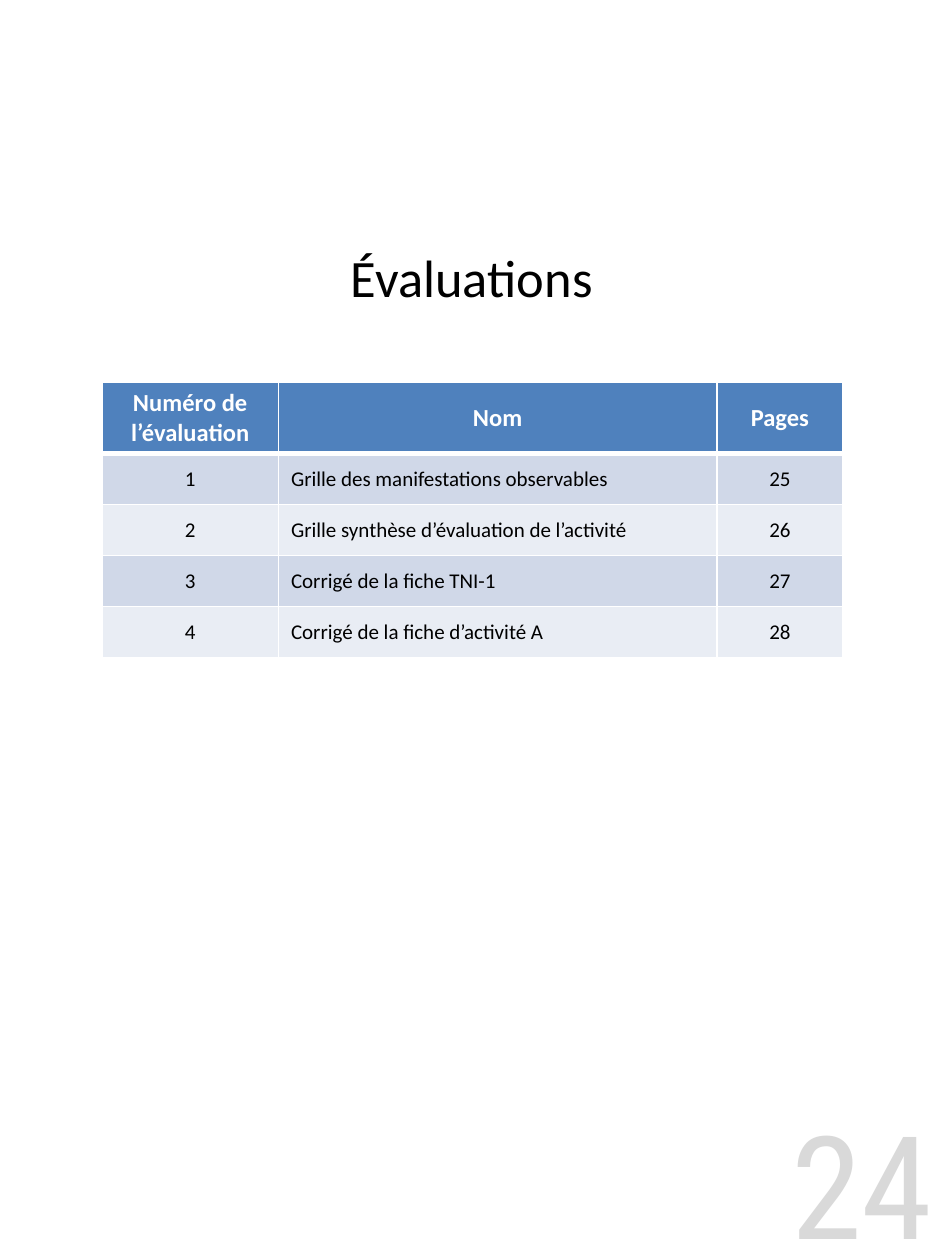
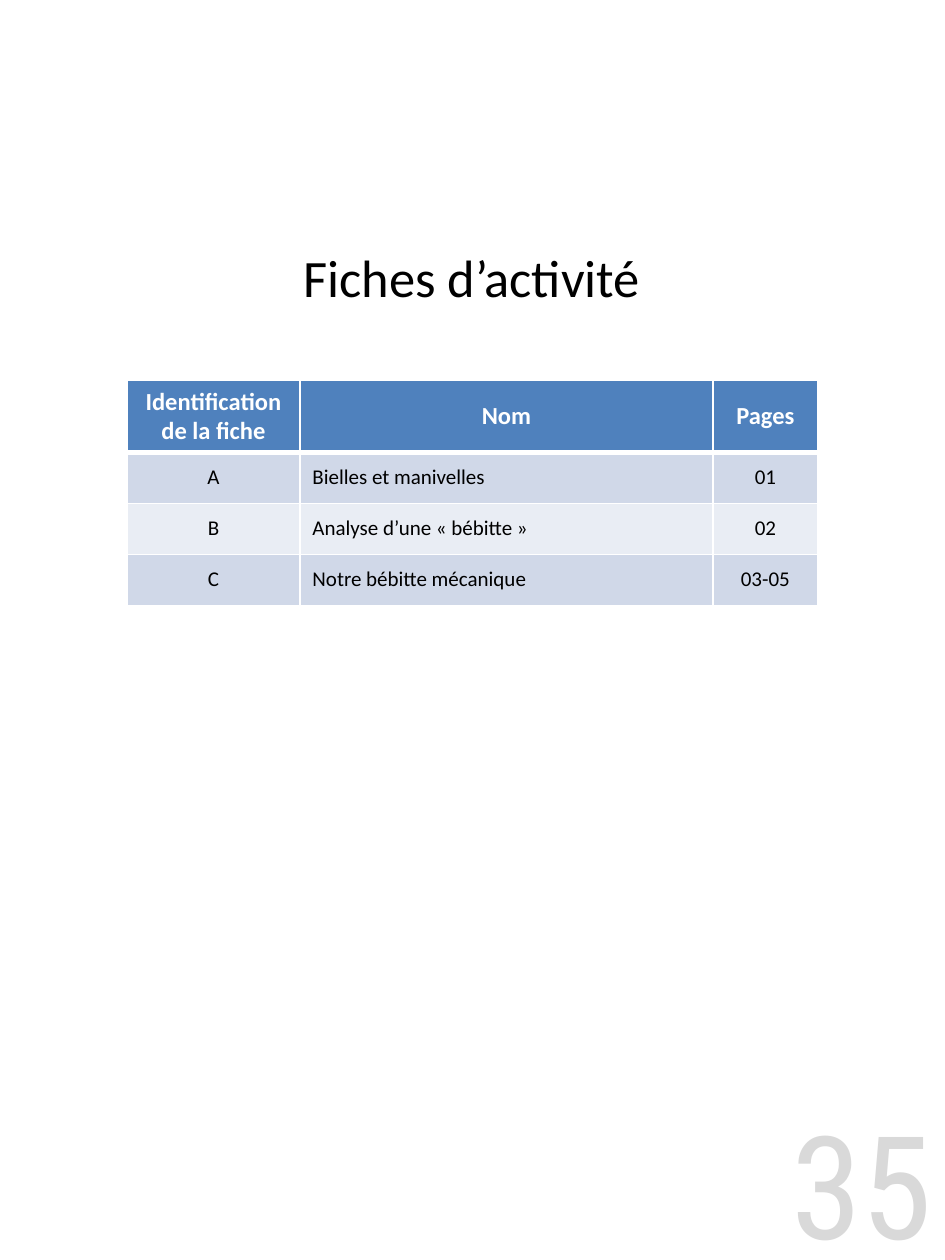
import dataclasses
import typing

import lxml.etree
import pptx
import pptx.dml.color
import pptx.enum.text
import pptx.oxml.ns
import pptx.util

ALIGN = pptx.enum.text.PP_ALIGN
MIDDLE = pptx.enum.text.MSO_ANCHOR.MIDDLE


@dataclasses.dataclass(frozen=True)
class Font:
    """Name, size, colour and weight of a run."""
    name: str
    size: int
    color: str
    bold: bool = False


@dataclasses.dataclass(frozen=True)
class Theme:
    """Colours and type shared by the slides."""
    title: Font = Font("Calibri", 30, "000000")
    head: Font = Font("Calibri", 14, "FFFFFF", True)
    body: Font = Font("Calibri", 12, "000000")
    folio: Font = Font("Roboto Condensed", 82, "D9D9D9")
    top: str = "4F81BD"
    bands: tuple[str, str] = ("D0D8E8", "E9EDF4")
    rule: str = "FFFFFF"
    thin: int = 1
    thick: int = 3


@dataclasses.dataclass(frozen=True)
class Grid:
    """Page split into equal columns and rows."""
    width: int = pptx.util.Inches(7.5)
    height: int = pptx.util.Inches(10)
    cols: int = 75
    rows: int = 100

    def across(self, count: float) -> int:
        """Return the width of some columns."""
        return round(self.width * count / self.cols)

    def down(self, count: float) -> int:
        """Return the height of some rows."""
        return round(self.height * count / self.rows)


class Box(typing.NamedTuple):
    """Place on the grid in columns and rows."""
    left: float
    top: float
    width: float
    height: float


@dataclasses.dataclass(frozen=True)
class Page:
    """Content of one index slide."""
    title: str
    folio: str
    label: tuple[str, str]
    top: float
    widths: tuple[float, float, float]
    items: tuple[tuple[str, str, str], ...]


THEME = Theme()
GRID = Grid()
TITLE = Box(14.1, 17.2, 46.7, 9.5)
FOLIO = Box(GRID.cols - 17.1, GRID.rows - 12.4, 17.1, 12.4)
HEAD_ROW, BODY_ROW = 5.7, 4.05

PAGES = (
    Page("Évaluations", "24", ("Numéro de", "l’évaluation"), 30.3, (14, 34.8, 10), (
        ("1", "Grille des manifestations observables", "25"),
        ("2", "Grille synthèse d’évaluation de l’activité", "26"),
        ("3", "Corrigé de la fiche TNI-1", "27"),
        ("4", "Corrigé de la fiche d’activité A", "28"),
    )),
    Page("Fiches d’activité", "35", ("Identification", "de la fiche"), 30.2, (13.7, 32.8, 8.3), (
        ("A", "Bielles et manivelles", "01"),
        ("B", "Analyse d’une « bébitte »", "02"),
        ("C", "Notre bébitte mécanique", "03-05"),
    )),
)


def write(frame: typing.Any, lines: typing.Sequence[str], font: Font, align: ALIGN) -> None:
    """Write one styled run per paragraph."""
    for index, line in enumerate(lines):
        para = frame.add_paragraph() if index else frame.paragraphs[0]
        para.alignment = align
        run = para.add_run()
        run.text = line
        run.font.name = font.name
        run.font.size = pptx.util.Pt(font.size)
        run.font.bold = font.bold
        run.font.color.rgb = pptx.dml.color.RGBColor.from_string(font.color)


def add_text(slide: typing.Any, box: Box, text: str, font: Font, align: ALIGN) -> None:
    """Add a text box centred on its height."""
    shape = slide.shapes.add_textbox(GRID.across(box.left), GRID.down(box.top),
                                     GRID.across(box.width), GRID.down(box.height))
    frame = shape.text_frame
    frame.word_wrap = True
    frame.vertical_anchor = MIDDLE
    write(frame, (text,), font, align)


def add_rules(cell: typing.Any, top: int, base: int) -> None:
    """Draw the four borders of a cell."""
    props = cell._tc.get_or_add_tcPr()
    sides = {"lnL": THEME.thin, "lnR": THEME.thin, "lnT": top, "lnB": base}
    qn = pptx.oxml.ns.qn
    for index, (side, width) in enumerate(sides.items()):
        line = lxml.etree.Element(qn(f"a:{side}"), w=str(pptx.util.Pt(width)))
        fill = lxml.etree.SubElement(line, qn("a:solidFill"))
        lxml.etree.SubElement(fill, qn("a:srgbClr"), val=THEME.rule)
        props.insert(index, line)


def add_index(slide: typing.Any, page: Page) -> None:
    """Add the table, centred across the page."""
    rows = [(page.label, ("Nom",), ("Pages",))]
    rows += [tuple((text,) for text in item) for item in page.items]
    width = sum(page.widths)
    height = HEAD_ROW + BODY_ROW * len(page.items)
    table = slide.shapes.add_table(
        len(rows), len(page.widths), GRID.across((GRID.cols - width) / 2),
        GRID.down(page.top), GRID.across(width), GRID.down(height)).table
    for col, share in zip(table.columns, page.widths):
        col.width = GRID.across(share)
    for y, row in enumerate(rows):
        head = y == 0
        table.rows[y].height = GRID.down(HEAD_ROW if head else BODY_ROW)
        tint = THEME.top if head else THEME.bands[(y - 1) % 2]
        for x, lines in enumerate(row):
            cell = table.cell(y, x)
            cell.vertical_anchor = MIDDLE
            cell.fill.solid()
            cell.fill.fore_color.rgb = pptx.dml.color.RGBColor.from_string(tint)
            add_rules(cell, THEME.thick if y == 1 else THEME.thin,
                      THEME.thick if head else THEME.thin)
            align = ALIGN.LEFT if x == 1 and not head else ALIGN.CENTER
            write(cell.text_frame, lines, THEME.head if head else THEME.body, align)


def main() -> None:
    """Build and save the slides."""
    deck = pptx.Presentation()
    deck.slide_width, deck.slide_height = GRID.width, GRID.height
    for page in PAGES:
        slide = deck.slides.add_slide(deck.slide_layouts[6])
        add_text(slide, TITLE, page.title, THEME.title, ALIGN.CENTER)
        add_index(slide, page)
        add_text(slide, FOLIO, page.folio, THEME.folio, ALIGN.RIGHT)
    deck.save("out.pptx")


if __name__ == "__main__":
    main()
